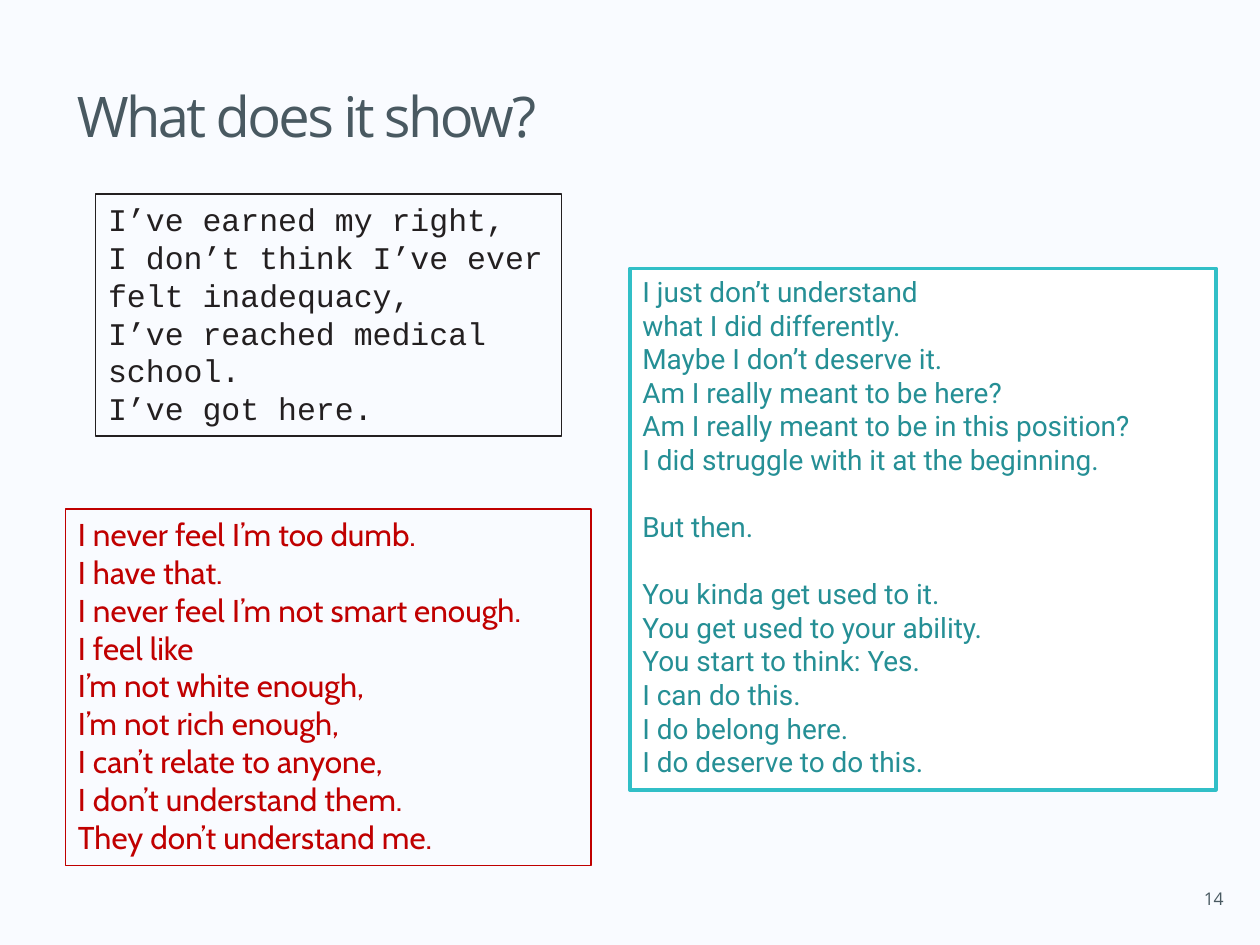
from dataclasses import dataclass
from typing import Optional

from pptx import Presentation
from pptx.dml.color import RGBColor
from pptx.enum.shapes import MSO_SHAPE
from pptx.enum.text import MSO_ANCHOR, MSO_AUTO_SIZE, PP_ALIGN
from pptx.util import Inches, Pt


@dataclass
class Poem:
    spot: tuple
    verses: list
    font: str
    size: int
    ink: str
    edge: str
    width: float
    fill: Optional[str] = None


POEMS = [
    Poem((0.76, 1.54, 3.7, 1.92),
         ["I’ve earned my right,\n"
          "I don’t think I’ve ever felt inadequacy,\n"
          "I’ve reached medical school.\n"
          "I’ve got here."],
         "Courier New", 18, "231F20", "231F20", 0.75),
    Poem((0.52, 4.04, 4.17, 2.83),
         ["I never feel I’m too dumb.\n"
          "I have that.\n"
          "I never feel I’m not smart enough.\n"
          "I feel like\n"
          "I’m not white enough,\n"
          "I’m not rich enough,\n"
          "I can’t relate to anyone,\n"
          "I don’t understand them.\n"
          "They don’t understand me."],
         "Cabin", 18, "C00000", "C00000", 0.75),
    Poem((5, 2.13, 4.65, 4.14),
         ["I just don’t understand\n"
          "what I did differently.\n"
          "Maybe I don’t deserve it.\n"
          "Am I really meant to be here?\n"
          "Am I really meant to be in this position?\n"
          "I did struggle with it at the beginning.",
          "But then.",
          "You kinda get used to it.\n"
          "You get used to your ability.\n"
          "You start to think: Yes.\n"
          "I can do this.\n"
          "I do belong here.\n"
          "I do deserve to do this."],
         "Roboto", 16, "258F95", "31BFC7", 2, "FFFFFF"),
]


def tint(code: str) -> RGBColor:
    return RGBColor.from_string(code)


def place(shape, spot: tuple) -> None:
    shape.left, shape.top, shape.width, shape.height = map(Inches, spot)


def write(para, text: str, *, font: str, size: int, ink: str,
          align=PP_ALIGN.LEFT, gap: float = 0, track: int = 0) -> None:
    para.alignment = align
    if gap:
        para.space_before = Pt(gap)
    run = para.add_run()
    run.text = text
    run.font.name = font
    run.font.size = Pt(size)
    run.font.color.rgb = tint(ink)
    if track:
        run._r.get_or_add_rPr().set("spc", str(track))


def draw(slide, poem: Poem) -> None:
    box = slide.shapes.add_shape(MSO_SHAPE.RECTANGLE, *map(Inches, poem.spot))
    box.shadow.inherit = False
    if poem.fill:
        box.fill.solid()
        box.fill.fore_color.rgb = tint(poem.fill)
    else:
        box.fill.background()
    box.line.color.rgb = tint(poem.edge)
    box.line.width = Pt(poem.width)
    frame = box.text_frame
    frame.word_wrap = True
    frame.auto_size = MSO_AUTO_SIZE.SHAPE_TO_FIT_TEXT
    frame.vertical_anchor = MSO_ANCHOR.TOP
    para = frame.paragraphs[0]
    for count, verse in enumerate(poem.verses):
        for row, line in enumerate(verse.split("\n")):
            if count or row:
                para = frame.add_paragraph()
            gap = poem.size * 1.2 if count and not row else 0
            write(para, line, font=poem.font, size=poem.size,
                  ink=poem.ink, gap=gap)


def main() -> None:
    deck = Presentation()
    deck.slide_width, deck.slide_height = Inches(10), Inches(7.5)
    slide = deck.slides.add_slide(deck.slide_layouts[5])
    slide.background.fill.solid()
    slide.background.fill.fore_color.rgb = tint("F9FBFF")

    title = slide.shapes.title
    place(title, (0.51, 0.21, 8.9, 1.02))
    title.text_frame.vertical_anchor = MSO_ANCHOR.BOTTOM
    write(title.text_frame.paragraphs[0], "What does it show?",
          font="Open Sans", size=32, ink="495961", track=-150)

    for poem in POEMS:
        draw(slide, poem)

    page = slide.shapes.add_textbox(*map(Inches, (9.02, 7, 0.79, 0.27)))
    page.text_frame.word_wrap = True
    write(page.text_frame.paragraphs[0], "14", font="Open Sans", size=10,
          ink="495961", align=PP_ALIGN.RIGHT)

    deck.save("out.pptx")


if __name__ == "__main__":
    main()
